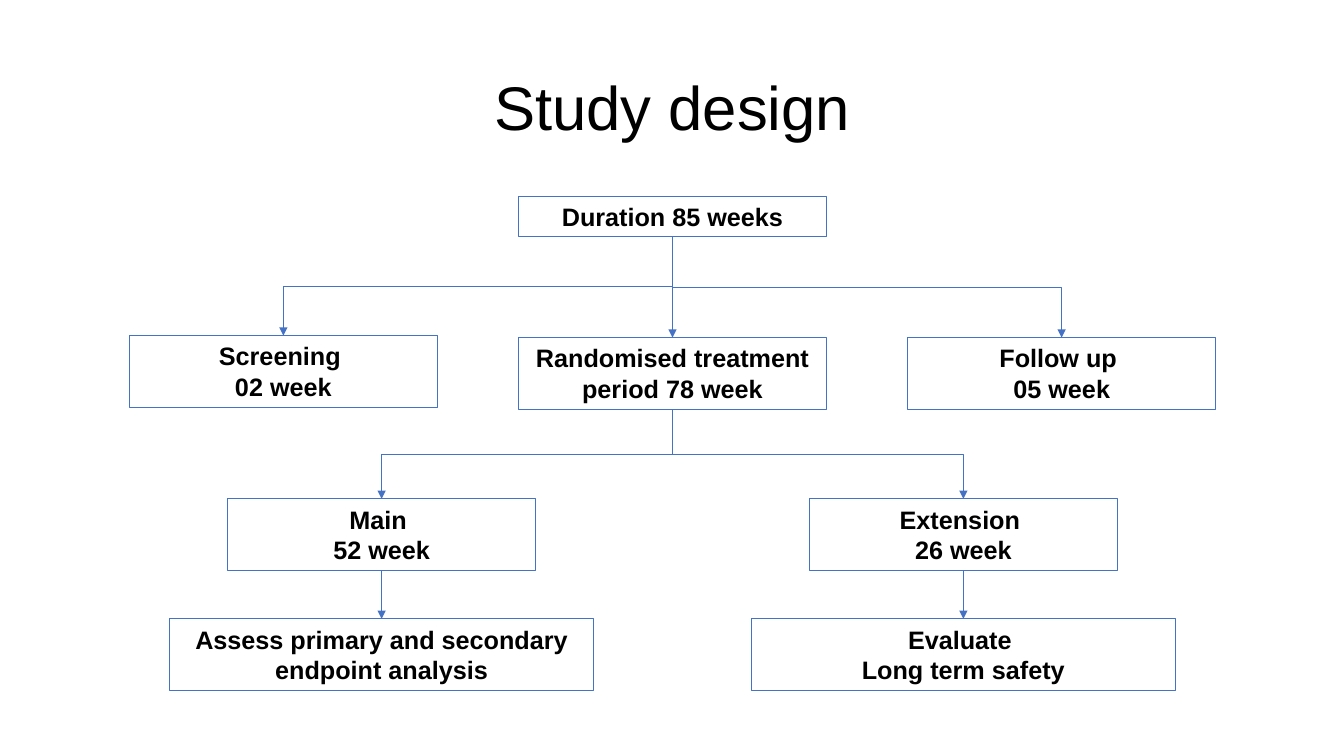
from lxml import etree
from pptx import Presentation
from pptx.dml.color import RGBColor
from pptx.enum.shapes import MSO_CONNECTOR as Connector, MSO_SHAPE as Shape
from pptx.enum.text import MSO_ANCHOR as Anchor, MSO_AUTO_SIZE as AutoSize, PP_ALIGN as Align
from pptx.oxml.ns import qn
from pptx.util import Inches, Pt

COLORS = {"line": "4472C4", "text": "000000"}
FONT = "Arial"
BOX_WIDTH, WIDE_WIDTH = 3.05, 4.2
ONE_LINE, TWO_LINES = 0.4, 0.71
TOP, BOTTOM = 0, 2


def color(name):
    return RGBColor.from_string(COLORS[name])


def write_lines(frame, lines, size, bold=False):
    frame.word_wrap = True
    for index, line in enumerate(lines):
        paragraph = frame.add_paragraph() if index else frame.paragraphs[0]
        paragraph.text = line
        paragraph.alignment = Align.CENTER
        paragraph.font.name = FONT
        paragraph.font.size = Pt(size)
        paragraph.font.bold = bold
        paragraph.font.color.rgb = color("text")


def add_title(slide, left, top, width, height, text):
    title = slide.shapes.add_textbox(Inches(left), Inches(top), Inches(width), Inches(height))
    write_lines(title.text_frame, [text], 44)
    title.text_frame.vertical_anchor = Anchor.MIDDLE
    title.text_frame.paragraphs[0].line_spacing = 0.9


def add_box(slide, center, top, lines, width=BOX_WIDTH, height=TWO_LINES):
    box = slide.shapes.add_shape(Shape.RECTANGLE, Inches(center - width / 2), Inches(top),
                                 Inches(width), Inches(height))
    box.shadow.inherit = False
    box.fill.background()
    box.line.color.rgb = color("line")
    box.line.width = Pt(0.75)
    write_lines(box.text_frame, lines, 18, bold=True)
    box.text_frame.vertical_anchor = Anchor.TOP
    box.text_frame.auto_size = AutoSize.SHAPE_TO_FIT_TEXT
    return box


def style_arrow(connector):
    connector.line.color.rgb = color("line")
    connector.line.width = Pt(0.5)
    etree.SubElement(connector.line._get_or_add_ln(), qn("a:tailEnd"), type="triangle")
    etree.SubElement(connector._element.spPr, qn("a:effectLst"))


def add_straight_arrow(slide, parent, child):
    connector = slide.shapes.add_connector(Connector.STRAIGHT, 0, 0, 0, 0)
    connector.begin_connect(parent, BOTTOM)
    connector.end_connect(child, TOP)
    style_arrow(connector)


def add_elbow_arrow(slide, parent, child):
    """Run down, across and down: an elbow turned a quarter about its middle."""
    start_x, start_y = parent.left + parent.width // 2, parent.top + parent.height
    end_x, end_y = child.left + child.width // 2, child.top
    middle_x, middle_y = (start_x + end_x) // 2, (start_y + end_y) // 2
    half_drop, half_span = (end_y - start_y) // 2, abs(end_x - start_x) // 2
    goes_right = end_x > start_x
    reach = -half_drop if goes_right else half_drop
    connector = slide.shapes.add_connector(
        Connector.ELBOW, middle_x - reach, middle_y - half_span,
        middle_x + reach, middle_y + half_span)
    degrees = 270 if goes_right else 90
    connector._element.spPr.find(qn("a:xfrm")).set("rot", str(degrees * 60000))
    style_arrow(connector)


def add_study_tree(slide, center, top):
    """Place the tree of study periods under its root box."""
    phase_step, part_step = 3.86, 2.885
    phase_top, part_top, goal_top = top + 1.4, top + 3, top + 4.19
    left_part, right_part = center - part_step, center + part_step

    duration = add_box(slide, center, top, ["Duration 85 weeks"], height=ONE_LINE)
    screening = add_box(slide, center - phase_step, phase_top - 0.02, ["Screening ", "02 week"])
    treatment = add_box(slide, center, phase_top, ["Randomised treatment period 78 week"])
    follow_up = add_box(slide, center + phase_step, phase_top, ["Follow up ", "05 week"])
    main_part = add_box(slide, left_part, part_top, ["Main ", "52 week"])
    extension = add_box(slide, right_part, part_top, ["Extension ", "26 week"])
    endpoints = add_box(slide, left_part, goal_top,
                        ["Assess primary and secondary endpoint analysis"], WIDE_WIDTH)
    safety = add_box(slide, right_part, goal_top, ["Evaluate ", "Long term safety"], WIDE_WIDTH)

    for parent, child in [(duration, screening), (duration, follow_up),
                          (treatment, main_part), (treatment, extension)]:
        add_elbow_arrow(slide, parent, child)
    for parent, child in [(duration, treatment), (main_part, endpoints), (extension, safety)]:
        add_straight_arrow(slide, parent, child)


def main():
    presentation = Presentation()
    presentation.slide_width, presentation.slide_height = Inches(13.33), Inches(7.5)
    slide = presentation.slides.add_slide(presentation.slide_layouts[6])
    add_title(slide, 0.92, 0.37, 11.5, 1.45, "Study design")
    add_study_tree(slide, 6.67, 1.95)
    presentation.save("out.pptx")


if __name__ == "__main__":
    main()
